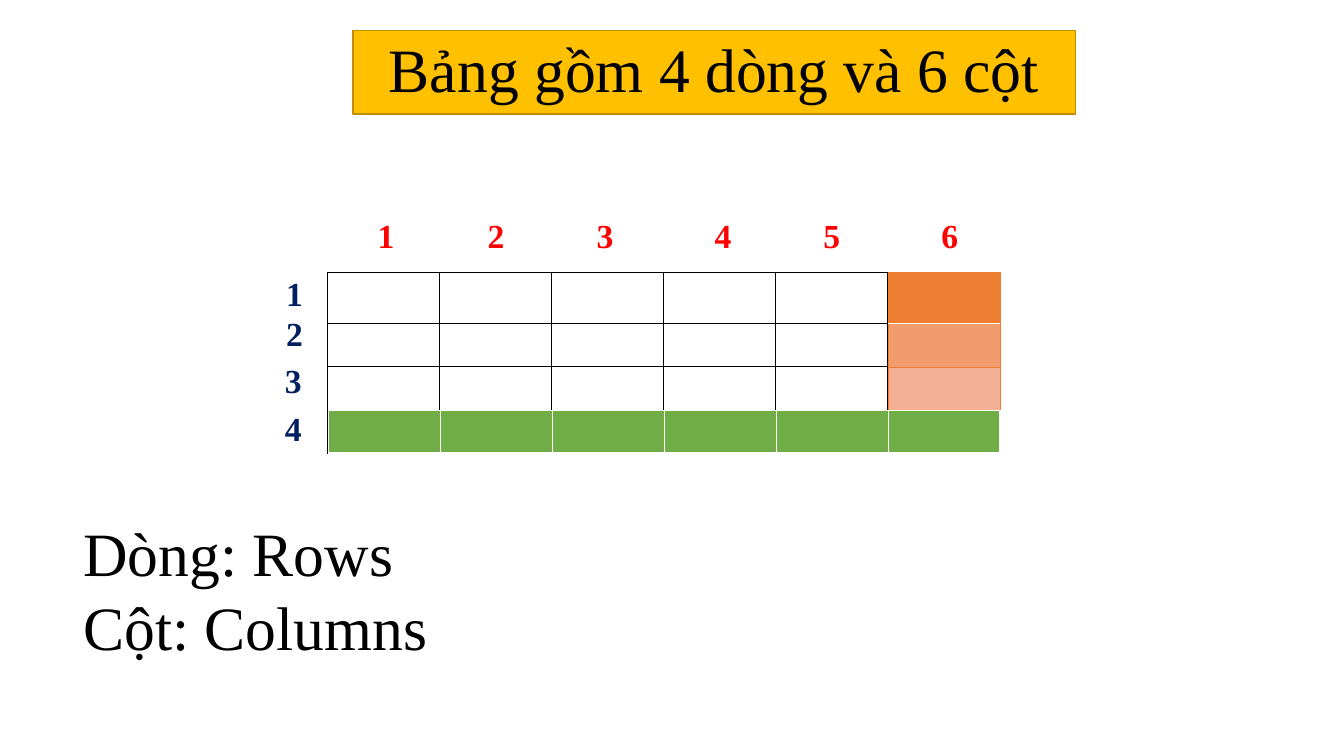
from dataclasses import dataclass

import pptx
import pptx.dml.color
import pptx.enum.text
import pptx.oxml
import pptx.oxml.ns
import pptx.util
from pptx.util import Inches

FONT = "Times New Roman"
BLACK, WHITE, RED, NAVY = "000000", "FFFFFF", "FF0000", "002060"
GOLD, DARK_GOLD, ORANGE, GREEN = "FFC000", "BD8E00", "ED7D31", "70AD47"
MID_ORANGE, PALE_ORANGE = "F19C6D", "F4B095"
COLUMN_WIDTH = 1.11
ROW_HEIGHTS = [0.51, 0.43, 0.43, 0.43]
CENTER = pptx.enum.text.PP_ALIGN.CENTER
LEFT = pptx.enum.text.PP_ALIGN.LEFT


@dataclass
class Border:
    color: str
    width: float


@dataclass
class Grid:
    left: float
    top: float
    columns: int
    heights: list[float]
    fills: list[str | None]  # one per row
    sides: dict[str, Border]  # keyed L, R, T, B
    header_bottom: Border | None = None


@dataclass
class Label:
    text: str
    left: float
    top: float
    color: str


def rgb(color: str) -> pptx.dml.color.RGBColor:
    return pptx.dml.color.RGBColor.from_string(color)


def set_borders(cell, sides: dict[str, Border]) -> None:
    properties = cell._tc.get_or_add_tcPr()
    for index, side in enumerate("LRTB"):
        border = sides[side]
        line = pptx.oxml.parse_xml(
            f'<a:ln{side} {pptx.oxml.ns.nsdecls("a")} w="{int(border.width * 12700)}">'
            f'<a:solidFill><a:srgbClr val="{border.color}"/></a:solidFill></a:ln{side}>'
        )
        properties.insert(index, line)


def draw_grid(page, grid: Grid) -> None:
    frame = page.shapes.add_table(
        len(grid.heights), grid.columns, Inches(grid.left), Inches(grid.top),
        Inches(COLUMN_WIDTH * grid.columns), Inches(sum(grid.heights)),
    )
    table = frame.table
    table.first_row = table.horz_banding = False
    for column in table.columns:
        column.width = Inches(COLUMN_WIDTH)
    for index, (row, height, fill) in enumerate(zip(table.rows, grid.heights, grid.fills)):
        row.height = Inches(height)
        sides = dict(grid.sides)
        if grid.header_bottom and index == 0:
            sides["B"] = grid.header_bottom
        if grid.header_bottom and index == 1:
            sides["T"] = grid.header_bottom
        for cell in row.cells:
            if fill:
                cell.fill.solid()
                cell.fill.fore_color.rgb = rgb(fill)
            else:
                cell.fill.background()
            set_borders(cell, sides)


def write(shape, text: str, size: float, color: str, align, bold: bool = False) -> None:
    shape.text_frame.text = text
    shape.text_frame.word_wrap = True
    for para in shape.text_frame.paragraphs:
        para.alignment = align
        for span in para.runs:
            span.font.name = FONT
            span.font.size = pptx.util.Pt(size)
            span.font.bold = bold
            span.font.color.rgb = rgb(color)


def draw_label(page, label: Label) -> None:
    box = page.shapes.add_textbox(
        Inches(label.left), Inches(label.top), Inches(0.5), Inches(0.5))
    write(box, label.text, 24, label.color, CENTER, bold=True)


def place_title(page) -> None:
    title = page.shapes.title
    title.left, title.top = Inches(3.5), Inches(0.3)
    title.width, title.height = Inches(7.17), Inches(0.83)
    title.fill.solid()
    title.fill.fore_color.rgb = rgb(GOLD)
    title.line.color.rgb = rgb(DARK_GOLD)
    title.line.width = pptx.util.Pt(1)
    write(title, "Bảng gồm 4 dòng và 6 cột", 44, BLACK, CENTER)
    title.text_frame.auto_size = pptx.enum.text.MSO_AUTO_SIZE.NONE
    title.text_frame.vertical_anchor = pptx.enum.text.MSO_ANCHOR.MIDDLE
    title.text_frame.paragraphs[0].line_spacing = 0.9


def all_sides(color: str, width: float) -> dict[str, Border]:
    return {side: Border(color, width) for side in "LRTB"}


def main() -> None:
    deck = pptx.Presentation()
    deck.slide_width, deck.slide_height = Inches(13.33), Inches(7.5)
    page = deck.slides.add_slide(deck.slide_layouts[5])
    place_title(page)

    # Table of four rows and six columns, with one column and one row highlighted
    grids = [
        Grid(3.25, 2.7, 6, ROW_HEIGHTS, [None] * 4, all_sides(BLACK, 1)),
        Grid(8.81, 2.7, 1, ROW_HEIGHTS, [ORANGE, MID_ORANGE, PALE_ORANGE, MID_ORANGE],
             all_sides(ORANGE, 0.5), header_bottom=Border(WHITE, 1)),
        Grid(3.26, 4.07, 6, ROW_HEIGHTS[-1:], [GREEN],
             all_sides(WHITE, 1) | {"B": Border(WHITE, 3)}),
    ]
    for grid in grids:
        draw_grid(page, grid)

    # Row and column numbers
    row_places = [(2.67, 2.66), (2.67, 3.06), (2.66, 3.52), (2.66, 4)]
    column_lefts = [3.58, 4.67, 5.75, 6.92, 8, 9.17]
    labels = [Label(str(number), left, top, NAVY)
              for number, (left, top) in enumerate(row_places, 1)]
    labels += [Label(str(number), left, 2.08, RED)
               for number, left in enumerate(column_lefts, 1)]
    for label in labels:
        draw_label(page, label)

    # Vocabulary
    words = page.shapes.add_textbox(Inches(0.73), Inches(5.06), Inches(4.87), Inches(1.58))
    write(words, "Dòng: Rows\nCột: Columns", 44, BLACK, LEFT)

    deck.save("out.pptx")


if __name__ == "__main__":
    main()
